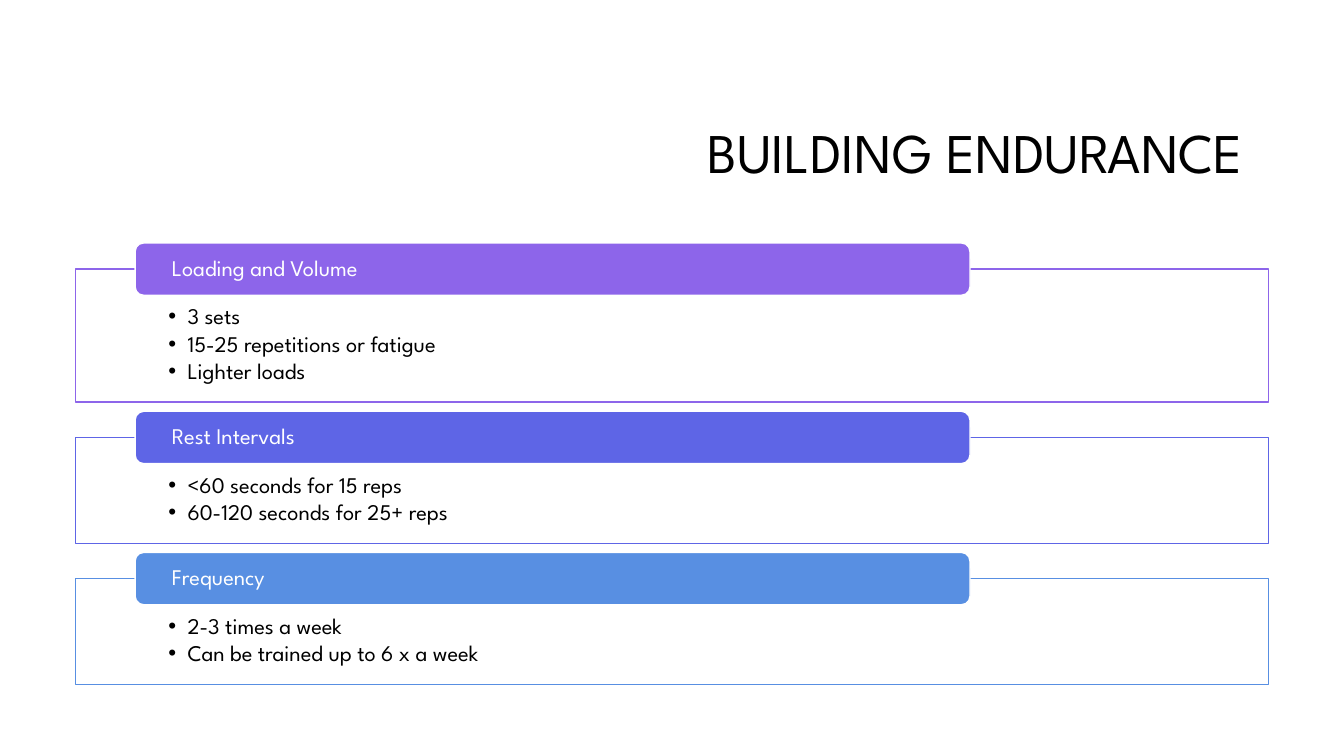
from lxml.etree import SubElement
from pptx import Presentation
from pptx.dml.color import RGBColor
from pptx.enum.shapes import MSO_SHAPE
from pptx.enum.text import MSO_ANCHOR, PP_ALIGN
from pptx.oxml.ns import qn
from pptx.util import Inches, Pt

FONT = "League Spartan"
COLORS = {
    "black": "000000",
    "white": "FFFFFF",
    "purple": "8D65EA",
    "indigo": "5E65E6",
    "blue": "588FE2",
}
PANELS = [
    ("Loading and Volume", "purple",
     ["3 sets", "15-25 repetitions or fatigue", "Lighter loads"]),
    ("Rest Intervals", "indigo",
     ["<60 seconds for 15 reps", "60-120 seconds for 25+ reps"]),
    ("Frequency", "blue",
     ["2-3 times a week", "Can be trained up to 6 x a week"]),
]


def color(name):
    return RGBColor.from_string(COLORS[name])


def inset(frame, left, top, right, bottom):
    frame.word_wrap = True
    frame.margin_left, frame.margin_top = Inches(left), Inches(top)
    frame.margin_right, frame.margin_bottom = Inches(right), Inches(bottom)


def write(para, text, size, tint, align=PP_ALIGN.LEFT):
    para.alignment = align
    para.line_spacing = 0.9
    run = para.add_run()
    run.text = text
    run.font.name = FONT
    run.font.size = Pt(size)
    run.font.color.rgb = color(tint)


def bullet(para):
    props = para._p.get_or_add_pPr()
    props.set("marL", str(Inches(0.19)))
    props.set("indent", str(-Inches(0.19)))
    SubElement(props, qn("a:buFont"), typeface="Arial")
    SubElement(props, qn("a:buChar"), char="•")


def block(slide, kind, box, fill, line):
    shape = slide.shapes.add_shape(kind, *[Inches(v) for v in box])
    shape.shadow.inherit = False
    shape.fill.solid()
    shape.fill.fore_color.rgb = color(fill)
    shape.line.color.rgb = color(line)
    shape.line.width = Pt(1)
    return shape


def heading(slide, left, top, width, height):
    title = slide.shapes.title
    title.left, title.top = Inches(left), Inches(top)
    title.width, title.height = Inches(width), Inches(height)
    frame = title.text_frame
    inset(frame, 0.1, 0.05, 0.26, 0.05)
    frame.vertical_anchor = MSO_ANCHOR.MIDDLE
    write(frame.paragraphs[0], "BUILDING ENDURANCE", 40, "black", PP_ALIGN.RIGHT)


def panel(slide, left, top, width, height, label, tint, items):
    body = block(slide, MSO_SHAPE.RECTANGLE, (left, top, width, height),
                 "white", tint)
    shade = body.fill._xPr.find(qn("a:solidFill"))[0]
    SubElement(shade, qn("a:alpha"), val="90000")
    frame = body.text_frame
    inset(frame, 0.92, 0.36, 0.92, 0.12)
    frame.vertical_anchor = MSO_ANCHOR.TOP
    for i, item in enumerate(items):
        para = frame.add_paragraph() if i else frame.paragraphs[0]
        bullet(para)
        para.space_after = Pt(2.4)
        write(para, item, 16, "black")

    tab = block(slide, MSO_SHAPE.ROUNDED_RECTANGLE,
                (left + 0.59, top - 0.26, width * 0.7, 0.52), tint, "white")
    inset(tab.text_frame, 0.34, 0.03, 0.34, 0.03)
    tab.text_frame.vertical_anchor = MSO_ANCHOR.MIDDLE
    write(tab.text_frame.paragraphs[0], label, 16, "white")


def stack(slide, left, top, width, gap):
    for label, tint, items in PANELS:
        height = 0.51 + 0.27 * len(items)
        panel(slide, left, top, width, height, label, tint, items)
        top += height + gap


def main():
    deck = Presentation()
    deck.slide_width, deck.slide_height = Inches(13.33), Inches(7.5)
    slide = deck.slides.add_slide(deck.slide_layouts[5])
    heading(slide, 3.17, 0.84, 9.42, 1.41)
    stack(slide, 0.75, 2.67, 11.83, 0.35)
    deck.save("out.pptx")


if __name__ == "__main__":
    main()
